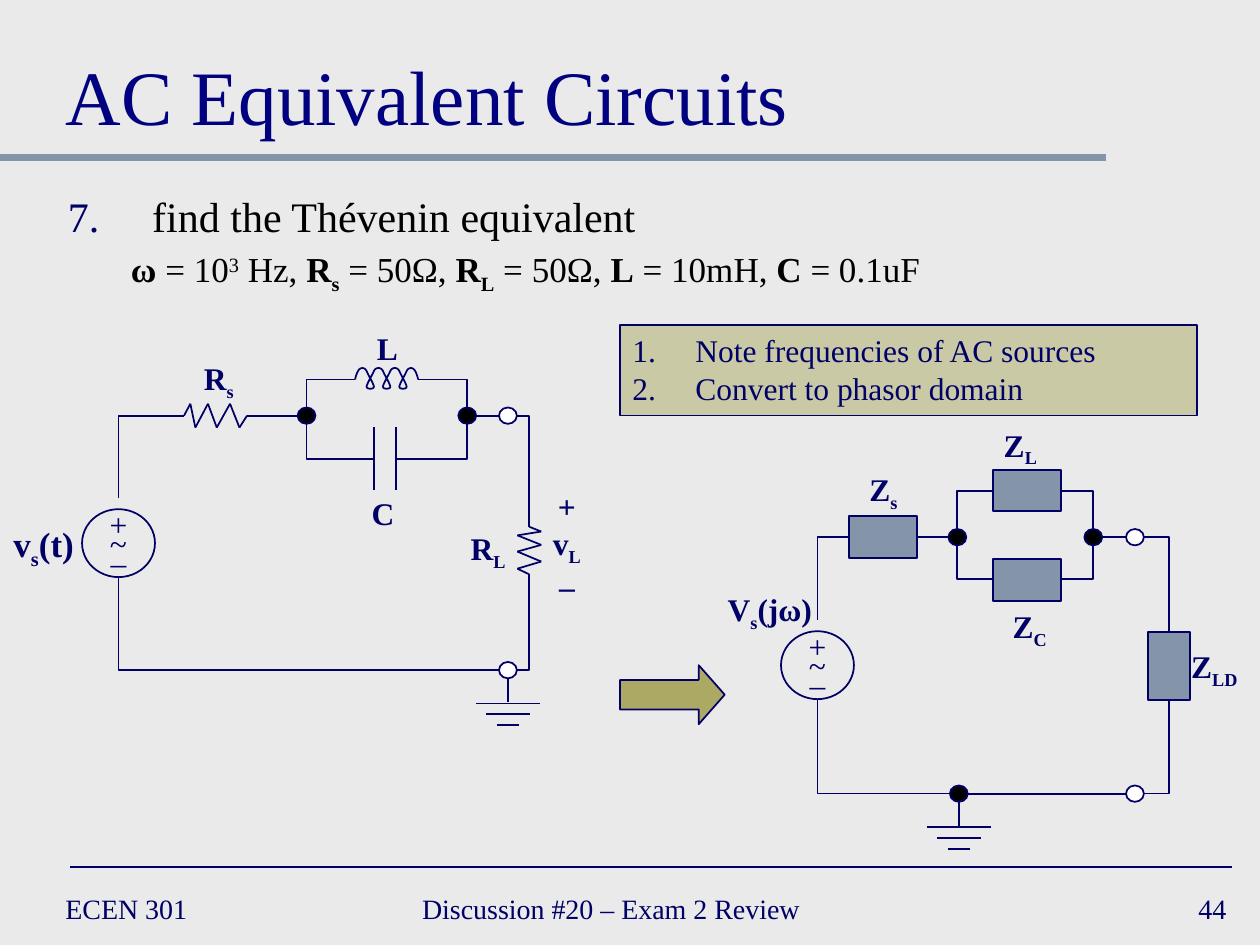
from dataclasses import dataclass

from lxml import etree
from pptx import Presentation
from pptx import util as u
from pptx.dml.color import RGBColor
from pptx.enum import shapes, text
from pptx.oxml.ns import qn


@dataclass(frozen=True)
class Theme:
    font: str = "Times New Roman"
    paper: str = "EAEAEA"
    ink: str = "000066"
    title: str = "000080"
    black: str = "000000"
    white: str = "FFFFFF"
    steel: str = "8495A9"
    olive: str = "ACA964"
    title_size: int = 44
    body_size: int = 24
    detail_size: int = 20
    label_size: int = 18
    footer_size: int = 16


@dataclass(frozen=True)
class Box:
    """A region of the slide, in centimetres."""
    left: float
    top: float
    width: float
    height: float

    def at(self, x, y):
        return u.Cm(self.left + x), u.Cm(self.top + y)


THEME = Theme()
SHAPE = shapes.MSO_SHAPE
TOP, MIDDLE = text.MSO_ANCHOR.TOP, text.MSO_ANCHOR.MIDDLE
CENTER = text.PP_ALIGN.CENTER
BASELINES = {"_": "-25000", "^": "30000"}
ZIGZAG = (0, 0.1, 0.18, 0.38, 0.52, 0.73, 0.88, 1)
# Cubic curves of an inductor: control, control, end, relative to the start of each part
COIL_RISE = [((0.02, -0.09), (0.06, -0.23), (0.14, -0.23))]
COIL_LOOP = [((0.05, 0), (0.08, 0.03), (0.1, 0.08)),
             ((0.13, 0.15), (0.24, 0.33), (0.24, 0.38)),
             ((0.24, 0.43), (0.09, 0.43), (0.09, 0.38)),
             ((0.09, 0.33), (0.2, 0.15), (0.23, 0.08)),
             ((0.25, 0.03), (0.28, 0), (0.33, 0))]
COIL_FALL = [((0.08, 0), (0.12, 0.14), (0.14, 0.23))]


def rgb(value):
    return RGBColor.from_string(value)


def write(paragraph, runs, size, color=THEME.ink, bold=False, align=None):
    """Fill a paragraph with (words, marks) runs; marks are b, _ and ^."""
    paragraph.alignment = align
    font = paragraph.font
    font.name, font.size, font.bold = THEME.font, u.Pt(size), bold
    font.color.rgb = rgb(color)
    for words, marks in runs:
        run = paragraph.add_run()
        run.text = words
        if "b" in marks:
            run.font.bold = True
        for mark in BASELINES.keys() & set(marks):
            run._r.get_or_add_rPr().set("baseline", BASELINES[mark])


def indent(paragraph, left, hanging, number=None):
    properties = paragraph._p.get_or_add_pPr()
    properties.set("marL", str(u.Cm(left)))
    properties.set("indent", str(-u.Cm(hanging)))
    if number:
        color = etree.SubElement(properties, qn("a:buClr"))
        etree.SubElement(color, qn("a:srgbClr"), val=THEME.ink)
        etree.SubElement(properties, qn("a:buAutoNum"), type="arabicPeriod", startAt=str(number))


def text_frame(slide, box, anchor):
    shape = slide.shapes.add_textbox(*box.at(0, 0), u.Cm(box.width), u.Cm(box.height))
    frame = shape.text_frame
    frame.word_wrap, frame.vertical_anchor = True, anchor
    return frame


def label(slide, box, x, y, lines, size=THEME.label_size, bold=True):
    """Centre lines of runs on a point of the box."""
    width, height = 1.75, 0.25 + 0.76 * len(lines)
    place = Box(box.left + x - width / 2, box.top + y - height / 2, width, height)
    frame = text_frame(slide, place, TOP)
    frame.word_wrap = False
    frame.margin_left = frame.margin_right = 0
    for i, runs in enumerate(lines):
        paragraph = frame.add_paragraph() if i else frame.paragraphs[0]
        write(paragraph, runs, size, bold=bold, align=CENTER)


def wire(slide, box, start, end, bent=False, color=THEME.ink, width=1):
    """Join two points; a bent wire runs level first, then upright."""
    kind = shapes.MSO_CONNECTOR.ELBOW if bent else shapes.MSO_CONNECTOR.STRAIGHT
    connector = slide.shapes.add_connector(kind, *box.at(*start), *box.at(*end))
    connector.line.color.rgb, connector.line.width = rgb(color), u.Pt(width)
    properties = connector._element.spPr
    if bent:
        properties.find(qn("a:prstGeom")).set("prst", "bentConnector2")
    etree.SubElement(properties, qn("a:effectLst"))


def wires(slide, box, pairs, bent=False):
    for start, end in pairs:
        wire(slide, box, start, end, bent)


def outline(shape, fill=None):
    shape.shadow.inherit = False
    shape.line.color.rgb, shape.line.width = rgb(THEME.ink), u.Pt(1)
    if fill:
        shape.fill.solid()
        shape.fill.fore_color.rgb = rgb(fill)
    else:
        shape.fill.background()


def part(slide, box, kind, x, y, width, height, fill=None):
    """Centre a preset shape on a point of the box."""
    shape = slide.shapes.add_shape(kind, *box.at(x - width / 2, y - height / 2),
                                   u.Cm(width), u.Cm(height))
    outline(shape, fill)
    return shape


def node(slide, box, x, y, fill):
    part(slide, box, SHAPE.OVAL, x, y, 0.36, 0.33, fill)


def impedance(slide, box, x, y, upright=False):
    shape = part(slide, box, SHAPE.RECTANGLE, x, y, 1.37, 0.84, THEME.steel)
    shape.rotation = 270 if upright else 0


def source(slide, box, x, y):
    part(slide, box, SHAPE.OVAL, x, y, 1.47, 1.37)
    label(slide, box, x, y, [[("+", "")], [("–", "")]], bold=False)
    label(slide, box, x, y, [[("~", "")]], bold=False)


def ground(slide, box, x, y):
    wire(slide, box, (x, y), (x, y + 0.65))
    for i, half in enumerate((0.64, 0.44, 0.22)):
        level = y + 0.67 + 0.22 * i
        wire(slide, box, (x - half, level), (x + half, level))


def resistor(slide, box, x, y, length, upright=False):
    last = len(ZIGZAG) - 1
    swings = [0 if i in (0, last) else 0.24 * (-1) ** i for i in range(last + 1)]
    points = [(x - swing, y + length * along) if upright else (x + length * along, y + swing)
              for along, swing in zip(ZIGZAG, swings)]
    wires(slide, box, zip(points, points[1:]))


def inductor(slide, box, x, y, steps=6):
    points = [(x, y)]
    for curves in (COIL_RISE, *[COIL_LOOP] * 3, COIL_FALL):
        origin = points[-1]
        for curve in curves:
            a = points[-1]
            b, c, d = [(origin[0] + dx, origin[1] + dy) for dx, dy in curve]
            for step in range(1, steps + 1):
                t = step / steps
                s = 1 - t
                points.append(tuple(s**3 * a[k] + 3 * s * s * t * b[k] + 3 * s * t * t * c[k]
                                    + t**3 * d[k] for k in (0, 1)))
    builder = slide.shapes.build_freeform(*box.at(*points[0]))
    builder.add_line_segments([box.at(*point) for point in points[1:]], close=False)
    outline(builder.convert_to_shape())


def time_circuit(slide, box):
    rail, base = 2.03, 7.16
    wires(slide, box, [((10.06, base), (2.39, 5.28)), ((3.71, rail), (2.39, 3.68)),
                       ((7.16, 1.3), (6.18, 1.86)), ((8.43, 1.3), (9.42, 1.86)),
                       ((7.54, 2.9), (6.18, 2.18)), ((7.98, 2.9), (9.42, 2.18)),
                       ((10.41, rail), (10.67, 4.27)), ((10.41, base), (10.67, 5.23))], bent=True)
    wires(slide, box, [((4.98, rail), (6, rail)), ((9.6, rail), (10.06, rail)),
                       ((7.54, 2.26), (7.54, 3.53)), ((7.98, 2.26), (7.98, 3.53))])
    resistor(slide, box, 3.71, rail, 1.27)
    resistor(slide, box, 10.67, 4.27, 0.96, upright=True)
    inductor(slide, box, 7.16, 1.3)
    ground(slide, box, 10.24, base)
    source(slide, box, 2.39, 4.6)
    for x, y, fill in ((6.18, rail, THEME.black), (9.42, rail, THEME.black),
                       (10.24, rail, THEME.white), (10.24, base, THEME.white)):
        node(slide, box, x, y, fill)
    label(slide, box, 0.88, 4.57, [[("v", ""), ("s", "_"), ("(t)", "")]], THEME.detail_size)
    for x, y, runs in ((4.41, 1.27, [("R", ""), ("s", "_")]), (9.84, 4.7, [("R", ""), ("L", "_")]),
                       (7.81, 0.66, [("L", "")]), (7.72, 3.99, [("C", "")])):
        label(slide, box, x, y, [runs])
    label(slide, box, 11.43, 4.6, [[("+", "")], [("v", ""), ("L", "_")], [("–", "")]])


def phasor_circuit(slide, box):
    rail, base = 2.45, 7.62
    wires(slide, box, [((5.11, base), (2.26, 5.72)), ((2.9, rail), (2.26, 4.11)),
                       ((5.79, 1.52), (5.08, 2.29)), ((5.79, 3.3), (5.08, 2.62)),
                       ((7.16, 1.52), (7.82, 2.29)), ((7.16, 3.3), (7.82, 2.62)),
                       ((8.84, rail), (9.35, 4.39)), ((8.84, base), (9.35, 5.74))], bent=True)
    wires(slide, box, [((4.27, rail), (4.9, rail)), ((8, rail), (8.48, rail)),
                       ((5.29, base), (8.48, base))])
    ground(slide, box, 5.11, base)
    source(slide, box, 2.26, 5.03)
    for x, y, upright in ((3.58, rail, False), (6.48, 1.51, False),
                          (6.48, 3.31, False), (9.35, 5.04, True)):
        impedance(slide, box, x, y, upright)
    for x, y, fill in ((5.08, rail, THEME.black), (7.82, rail, THEME.black),
                       (8.66, rail, THEME.white), (5.11, base, THEME.black),
                       (8.66, base, THEME.white)):
        node(slide, box, x, y, fill)
    for x, y, name in ((3.59, 1.47, "s"), (6.35, 0.58, "L"), (6.54, 4.24, "C"), (10.26, 5.05, "LD")):
        label(slide, box, x, y, [[("Z", ""), (name, "_")]])
    label(slide, box, 1.3, 3.89, [[("V", ""), ("s", "_"), ("(jω)", "")]])


def heading(slide, box):
    wire(slide, box, (-1.07, 2.74), (21.23, 2.74), color=THEME.steel, width=4)
    frame = text_frame(slide, box, text.MSO_ANCHOR.BOTTOM)
    write(frame.paragraphs[0], [("AC Equivalent Circuits", "")], THEME.title_size, THEME.title)


def problem(slide, box):
    frame = text_frame(slide, box, TOP)
    task, values = frame.paragraphs[0], frame.add_paragraph()
    indent(task, 1.7, 1.7, number=7)
    write(task, [("find the Thévenin equivalent", "")], THEME.body_size, THEME.black)
    indent(values, 2.74, 1.47)
    values.space_before = u.Pt(4)
    write(values, [("ω", "b"), (" = 10", ""), ("3", "^"), (" Hz, ", ""),
                   ("R", "b"), ("s", "b_"), (" = 50Ω, ", ""), ("R", "b"), ("L", "b_"),
                   (" = 50Ω, ", ""), ("L", "b"), (" = 10mH, ", ""), ("C ", "b"),
                   ("= 0.1uF", "")], THEME.detail_size, THEME.black)


def steps(slide, box):
    shape = part(slide, box, SHAPE.RECTANGLE, box.width / 2, box.height / 2,
                 box.width, box.height, THEME.olive)
    color = shape._element.spPr.find(qn("a:solidFill")).find(qn("a:srgbClr"))
    etree.SubElement(color, qn("a:alpha"), val="50000")
    frame = shape.text_frame
    frame.word_wrap, frame.vertical_anchor = True, TOP
    for i, words in enumerate(("Note frequencies of AC sources", "Convert to phasor domain")):
        paragraph = frame.add_paragraph() if i else frame.paragraphs[0]
        indent(paragraph, 1.27, 1.27, number=1)
        write(paragraph, [(words, "")], THEME.label_size, align=text.PP_ALIGN.LEFT)


def arrow(slide, box):
    shape = part(slide, box, SHAPE.RIGHT_ARROW, box.width / 2, box.height / 2,
                 box.width, box.height, THEME.olive)
    shape.adjustments[1] = 0.44


def footer(slide, box):
    wire(slide, box, (0.35, -0.3), (23.77, -0.3))
    for x, width, words, align in ((0, 5.51, "ECEN 301", text.PP_ALIGN.LEFT),
                                   (7.19, 9.73, "Discussion #20 – Exam 2 Review", text.PP_ALIGN.LEFT),
                                   (18.62, 5.28, "44", text.PP_ALIGN.RIGHT)):
        frame = text_frame(slide, Box(box.left + x, box.top, width, box.height), MIDDLE)
        write(frame.paragraphs[0], [(words, "")], THEME.footer_size, align=align)


def main():
    presentation = Presentation()
    presentation.slide_width, presentation.slide_height = u.Cm(25.4), u.Cm(19.05)
    slide = presentation.slides.add_slide(presentation.slide_layouts[6])
    slide.background.fill.solid()
    slide.background.fill.fore_color.rgb = rgb(THEME.paper)
    heading(slide, Box(1.07, 0.43, 23.29, 2.54))
    problem(slide, Box(1.12, 3.71, 23.22, 2.84))
    time_circuit(slide, Box(0, 6.35, 12, 8.4))
    steps(slide, Box(12.5, 6.55, 11.63, 1.83))
    arrow(slide, Box(12.5, 13.41, 2.11, 1.19))
    phasor_circuit(slide, Box(14.22, 8.38, 11, 8.8))
    footer(slide, Box(1.07, 17.78, 23.9, 1.07))
    presentation.save("out.pptx")


if __name__ == "__main__":
    main()
